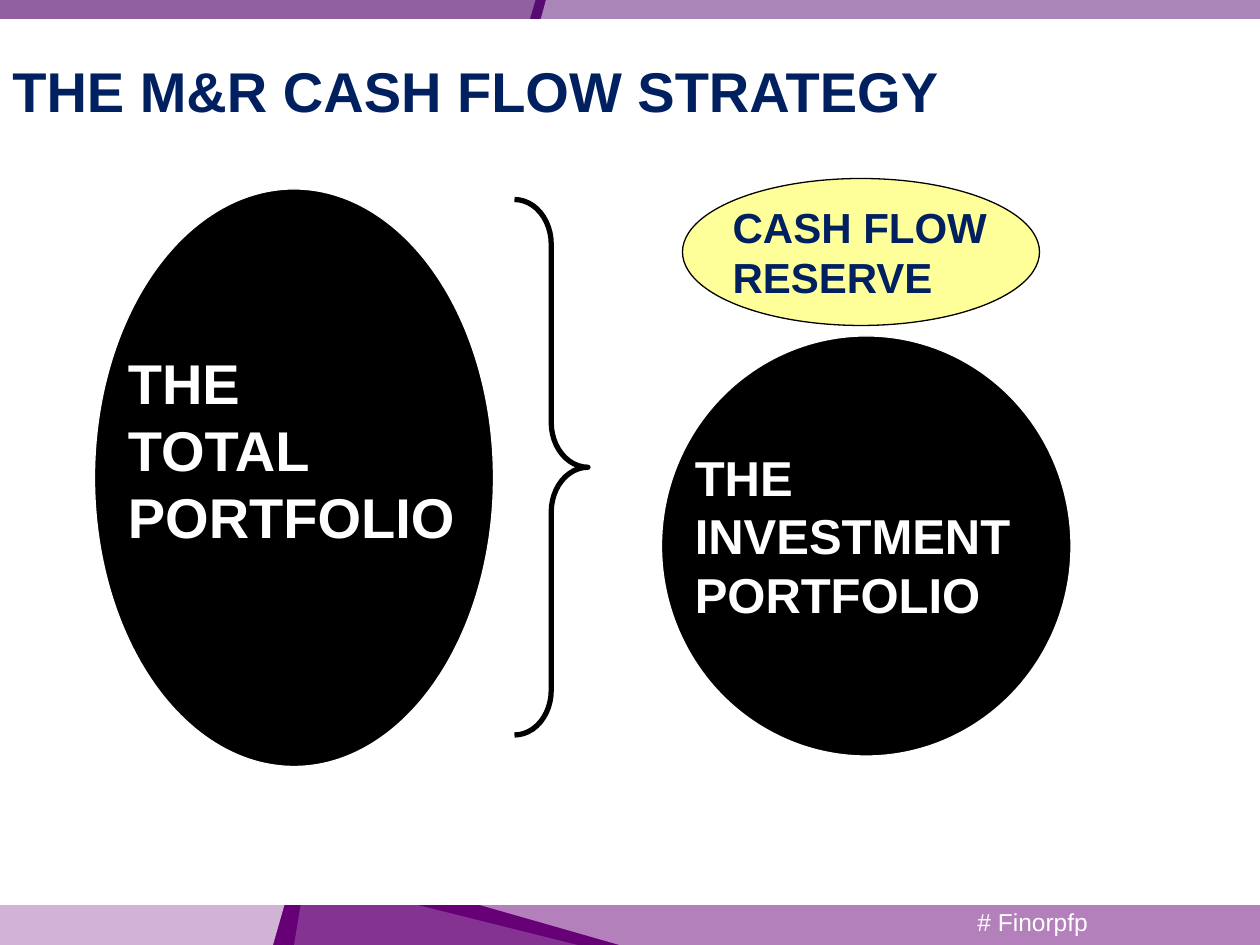
from dataclasses import dataclass

from lxml import etree
from pptx import Presentation
from pptx import util as u
from pptx.dml.color import RGBColor
from pptx.enum import shapes, text
from pptx.oxml.ns import qn

COLUMNS, ROWS = 120, 90
CELL = u.Inches(10) // COLUMNS


@dataclass(frozen=True)
class Theme:
    font: str = "Arial"
    white: str = "FFFFFF"
    black: str = "000000"
    navy: str = "002060"
    yellow: str = "FFFF99"
    top_band: str = "560C70"
    bottom_band: str = "670077"
    title: int = 32
    large: int = 32
    medium: int = 28
    small: int = 24
    tag: int = 14
    thin: float = 0.75
    thick: float = 3


@dataclass(frozen=True)
class Area:
    column: float
    row: float
    columns: float
    rows: float

    def lengths(self) -> list[int]:
        return [round(n * CELL) for n in (self.column, self.row, self.columns, self.rows)]


@dataclass(frozen=True)
class Figure:
    kind: shapes.MSO_SHAPE
    area: Area
    fill: str | None = None
    line: str | None = None
    width: float = 0
    bend: float | None = None


@dataclass(frozen=True)
class Veil:
    opacity: int
    points: tuple[tuple[float, float], ...]


@dataclass(frozen=True)
class Label:
    words: str
    area: Area
    size: int
    color: str
    bold: bool = True
    align: text.PP_ALIGN = text.PP_ALIGN.LEFT
    anchor: text.MSO_ANCHOR = text.MSO_ANCHOR.TOP


THEME = Theme()
KIND = shapes.MSO_SHAPE

BANDS = (
    Figure(KIND.RECTANGLE, Area(0, 0, COLUMNS, 1.8), THEME.top_band),
    Figure(KIND.RECTANGLE, Area(0, 86.2, COLUMNS, 3.8), THEME.bottom_band),
)
TAG = Label("# Finorpfp", Area(76.8, 85.4, 28, 4.8), THEME.tag, THEME.white, False,
            text.PP_ALIGN.RIGHT, text.MSO_ANCHOR.MIDDLE)
VEILS = (
    Veil(70, ((0, 6.4), (44.8, 18.5), (45.5, 19.8), (26.5, ROWS), (0, ROWS))),
    Veil(35, ((0, 0), (50.8, 0), (46.3, 16.6), (45, 17.3), (0, 5.2))),
    Veil(20, ((30.1, 83.5), (30.6, 83.5), (54.6, ROWS), (27.7, ROWS), (29.3, 84.2))),
    Veil(50, ((52.1, 0), (COLUMNS, 0), (COLUMNS, ROWS), (59.4, ROWS), (31, 82.3), (30.2, 81))),
)
FIGURES = (
    Figure(KIND.RIGHT_BRACE, Area(49, 19, 7, 51), None, THEME.black, THEME.thick, 0.61),
    Figure(KIND.OVAL, Area(9, 18, 38, 55), THEME.black, THEME.white, THEME.thin),
    Figure(KIND.OVAL, Area(65, 17, 34, 14), THEME.yellow, THEME.black, THEME.thin),
    Figure(KIND.OVAL, Area(63, 32, 39, 40), THEME.black, THEME.white, THEME.thin),
)
LABELS = (
    Label("THE\vTOTAL\vPORTFOLIO", Area(11, 32.6, 34, 20.4), THEME.large, THEME.white),
    Label("CASH FLOW RESERVE", Area(68.6, 18.6, 31, 10.9), THEME.small, THEME.navy),
    Label("THE\vINVESTMENT\vPORTFOLIO", Area(65, 42, 35, 18), THEME.medium, THEME.white),
    Label("THE M&R CASH FLOW STRATEGY", Area(0, 4.8, COLUMNS, 7.7), THEME.title, THEME.navy),
)


def paint(shape, fill: str | None, line: str | None = None, width: float = 0) -> None:
    shape.shadow.inherit = False
    for part, color in ((shape.fill, fill), (shape.line.fill, line)):
        if color is None:
            part.background()
        else:
            part.solid()
            part.fore_color.rgb = RGBColor.from_string(color)
    if line:
        shape.line.width = u.Pt(width)


def draw_figure(page, figure: Figure) -> None:
    shape = page.shapes.add_shape(figure.kind, *figure.area.lengths())
    if figure.bend is not None:
        shape.adjustments[0] = figure.bend
    paint(shape, figure.fill, figure.line, figure.width)


def draw_veil(page, veil: Veil) -> None:
    start, *rest = veil.points
    builder = page.shapes.build_freeform(*start, scale=CELL)
    builder.add_line_segments(rest, close=True)
    shape = builder.convert_to_shape()
    paint(shape, THEME.white)
    color = shape.fill._xPr.find(qn("a:solidFill"))[0]
    etree.SubElement(color, qn("a:alpha"), val=str(veil.opacity * 1000))


def draw_label(page, label: Label) -> None:
    box = page.shapes.add_textbox(*label.area.lengths())
    frame = box.text_frame
    frame.word_wrap = True
    frame.vertical_anchor = label.anchor
    para = frame.paragraphs[0]
    para.text = label.words
    para.alignment = label.align
    style = {"name": THEME.font, "size": u.Pt(label.size), "bold": label.bold}
    for span in para.runs:
        for name, value in style.items():
            setattr(span.font, name, value)
        span.font.color.rgb = RGBColor.from_string(label.color)


def main() -> None:
    deck = Presentation()
    deck.slide_width, deck.slide_height = COLUMNS * CELL, ROWS * CELL
    page = deck.slides.add_slide(deck.slide_layouts[6])
    for band in BANDS:
        draw_figure(page, band)
    draw_label(page, TAG)
    for veil in VEILS:
        draw_veil(page, veil)
    for figure in FIGURES:
        draw_figure(page, figure)
    for label in LABELS:
        draw_label(page, label)
    deck.save("out.pptx")


if __name__ == "__main__":
    main()
